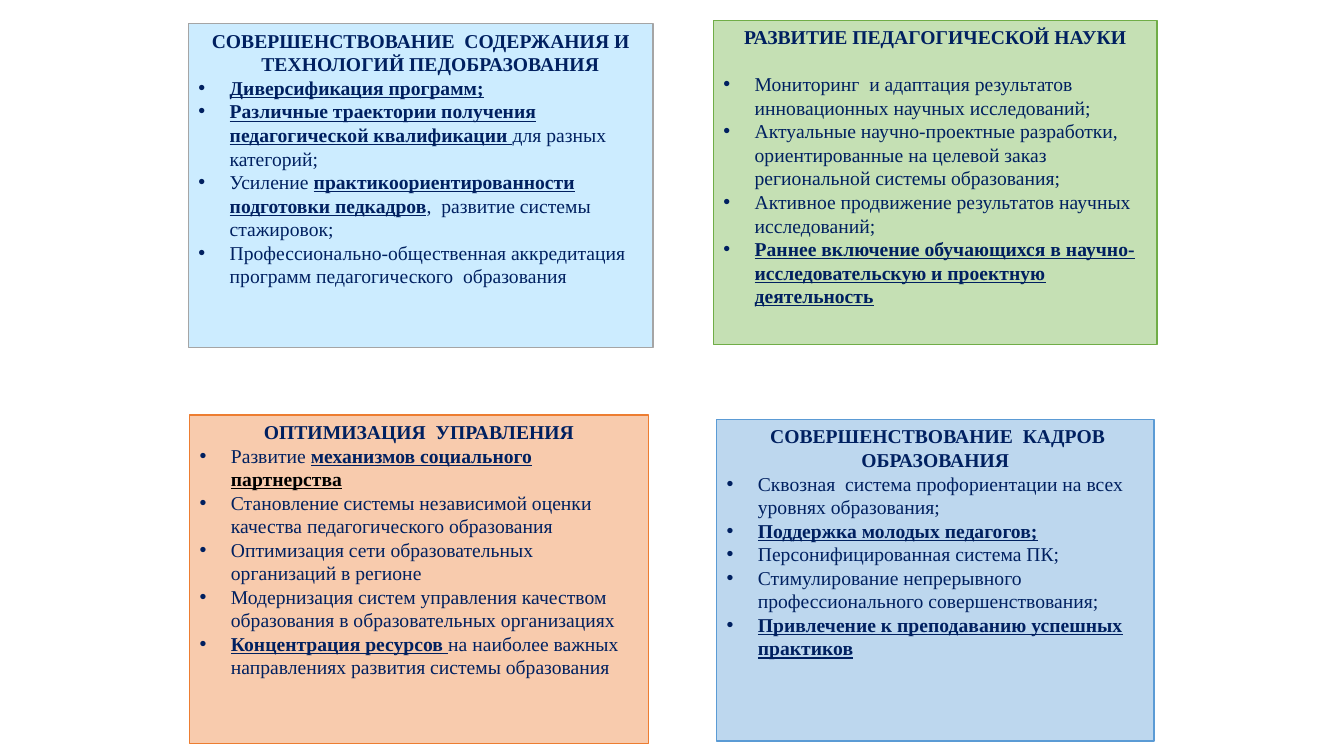
from lxml.etree import SubElement
from pptx import Presentation
from pptx.dml.color import RGBColor
from pptx.enum.shapes import MSO_SHAPE
from pptx.enum.text import MSO_ANCHOR, PP_ALIGN
from pptx.oxml.ns import qn
from pptx.util import Cm, Pt


def color(value):
    return RGBColor.from_string(value)


def add_run(paragraph, text, style):
    run = paragraph.add_run()
    run.text = text
    for attribute, value in {**BASE, **STYLES[style]}.items():
        setattr(run.font, attribute, value)
    run.font.color.rgb = color(INK[style])


BASE = {"name": "Times New Roman", "size": Pt(14)}
STYLES = {
    "heading": {"bold": True},
    "plain": {"bold": False},
    "key": {"bold": True, "underline": True},
    "black key": {"bold": True, "underline": True},
}
INK = {"heading": "002060", "plain": "002060", "key": "002060", "black key": "000000"}
FRAME = {"word_wrap": True, "vertical_anchor": MSO_ANCHOR.TOP}
BULLET_INDENT = Cm(0.79)

directions = [
    {
        "place": (4.75, 0.6, 11.71, 8.16),
        "fill": "CCECFF",
        "line": "A5A5A5",
        "heading": "СОВЕРШЕНСТВОВАНИЕ  СОДЕРЖАНИЯ И ТЕХНОЛОГИЙ ПЕДОБРАЗОВАНИЯ",
        "heading_indent": Cm(0.48),
        "heading_gap": Pt(0),
        "measures": [
            [("Диверсификация программ;", "key")],
            [("Различные траектории получения педагогической квалификации ", "key"),
             ("для разных категорий;", "plain")],
            [("Усиление ", "plain"),
             ("практикоориентированности подготовки педкадров", "key"),
             (",  развитие системы стажировок;", "plain")],
            [("Профессионально-общественная аккредитация программ педагогического  образования", "plain")],
        ],
    },
    {
        "place": (17.98, 0.51, 11.18, 8.18),
        "fill": "C5E0B4",
        "line": "70AD47",
        "heading": "РАЗВИТИЕ ПЕДАГОГИЧЕСКОЙ НАУКИ",
        "heading_indent": 0,
        "heading_gap": Pt(16.8),
        "measures": [
            [("Мониторинг  и адаптация результатов инновационных научных исследований;", "plain")],
            [("Актуальные научно-проектные разработки, ориентированные на целевой заказ "
              "региональной системы образования;", "plain")],
            [("Активное продвижение результатов научных исследований;", "plain")],
            [("Раннее включение обучающихся в научно-исследовательскую и проектную деятельность", "key")],
        ],
    },
    {
        "place": (4.78, 10.46, 11.56, 8.28),
        "fill": "F8CBAD",
        "line": "ED7D31",
        "heading": "ОПТИМИЗАЦИЯ  УПРАВЛЕНИЯ",
        "heading_indent": Cm(0.48),
        "heading_gap": Pt(0),
        "measures": [
            [("Развитие ", "plain"), ("механизмов социального ", "key"), ("партнерства", "black key")],
            [("Становление системы независимой оценки качества педагогического образования", "plain")],
            [("Оптимизация сети образовательных организаций в регионе", "plain")],
            [("Модернизация систем управления качеством образования в образовательных организациях", "plain")],
            [("Концентрация ресурсов ", "key"),
             ("на наиболее важных направлениях развития системы образования", "plain")],
        ],
    },
    {
        "place": (18.06, 10.57, 11.02, 8.1),
        "fill": "BDD7EE",
        "line": "5B9BD5",
        "heading": " СОВЕРШЕНСТВОВАНИЕ  КАДРОВ ОБРАЗОВАНИЯ",
        "heading_indent": 0,
        "heading_gap": Pt(0),
        "measures": [
            [("Сквозная  система профориентации на всех уровнях образования;", "plain")],
            [("Поддержка молодых педагогов;", "key")],
            [("Персонифицированная система ПК;", "plain")],
            [("Стимулирование непрерывного профессионального совершенствования;", "plain")],
            [("Привлечение к преподаванию успешных практиков", "key")],
        ],
    },
]

presentation = Presentation()
presentation.slide_width = Cm(33.87)
presentation.slide_height = Cm(19.05)
slide = presentation.slides.add_slide(presentation.slide_layouts[6])

for direction in directions:
    panel = slide.shapes.add_shape(MSO_SHAPE.RECTANGLE, *map(Cm, direction["place"]))
    panel.shadow.inherit = False
    panel.fill.solid()
    panel.fill.fore_color.rgb = color(direction["fill"])
    panel.line.color.rgb = color(direction["line"])
    panel.line.width = Pt(1)
    for attribute, value in FRAME.items():
        setattr(panel.text_frame, attribute, value)

    heading = panel.text_frame.paragraphs[0]
    heading.alignment = PP_ALIGN.CENTER
    heading.space_after = direction["heading_gap"]
    heading_format = heading._p.get_or_add_pPr()
    heading_format.set("marL", str(direction["heading_indent"]))
    heading_format.set("indent", str(-direction["heading_indent"]))
    add_run(heading, direction["heading"], "heading")

    for measure in direction["measures"]:
        item = panel.text_frame.add_paragraph()
        item.alignment = PP_ALIGN.LEFT
        item_format = item._p.get_or_add_pPr()
        item_format.set("marL", str(BULLET_INDENT))
        item_format.set("indent", str(-BULLET_INDENT))
        SubElement(item_format, qn("a:buFont")).set("typeface", "Arial")
        SubElement(item_format, qn("a:buChar")).set("char", "•")
        for text, style in measure:
            add_run(item, text, style)

presentation.save("out.pptx")
